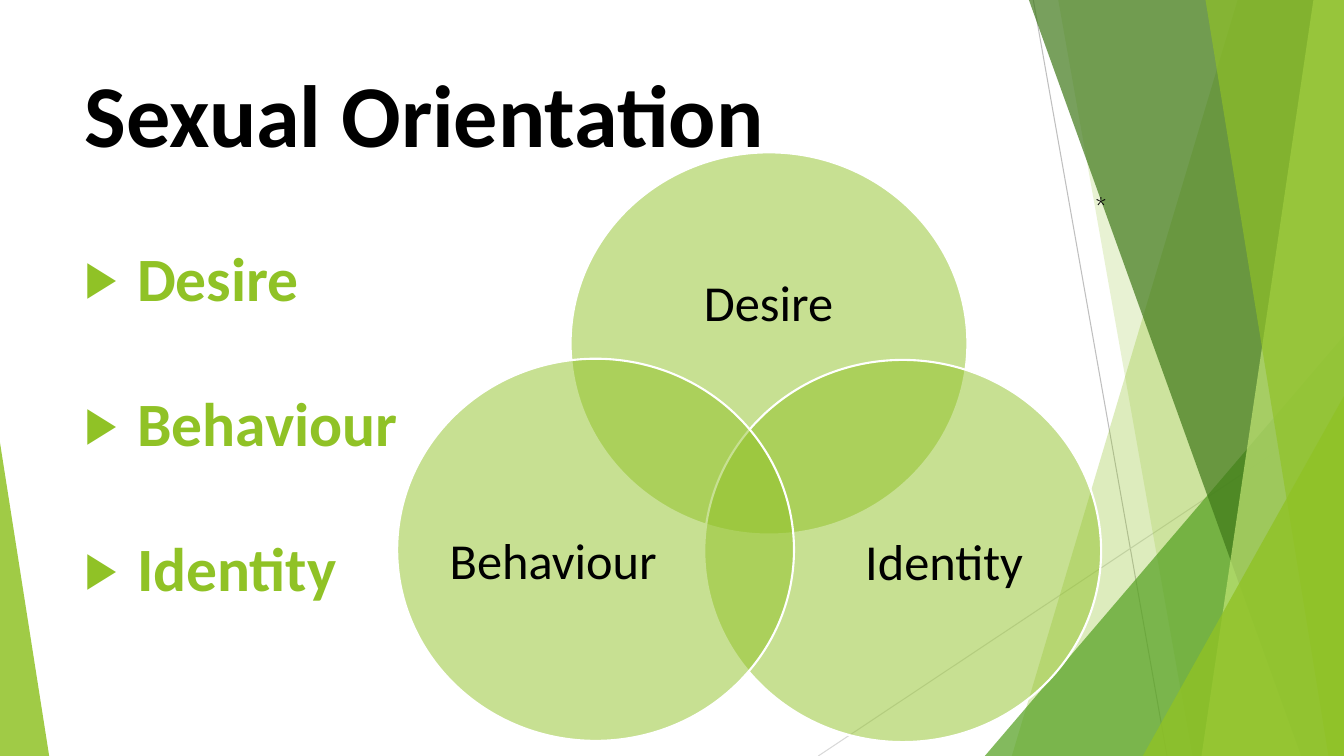
import pptx
import pptx.util
import pptx.dml.color
import pptx.enum.shapes
import pptx.enum.text
import pptx.oxml
import pptx.oxml.ns

Cm = pptx.util.Cm
Pt = pptx.util.Pt
KIND = pptx.enum.shapes.MSO_SHAPE
ANCHOR = pptx.enum.text.MSO_ANCHOR
ALIGN = pptx.enum.text.PP_ALIGN

WIDE, HIGH = 33.87, 19.05
HUES = {
    "lime": "90C226", "green": "54A021", "dark": "3F7819", "pale": "C0E474",
    "grey": "BFBFBF", "mist": "D9D9D9", "white": "FFFFFF", "black": "000000",
}
TITLE = "Sexual Orientation"
ITEMS = ["Desire", "Behaviour", "Identity"]
LINES = [
    ((26.04, 0), (29.41, HIGH), "grey"),
    ((WIDE, 10.24), (20.62, HIGH), "mist"),
]
DECOR = [
    ("band", (31.19, 25.5), "lime", 30),
    ("band", (26.67, 30.05), "lime", 20),
    ("wedge", (24.82, 8.46, 9.05, 10.59, 1), "green", 72),
    ("band", (25.93, 32.79), "dark", 70),
    ("band", (33.1, 30.28), "pale", 70),
    ("band", (30.38, 33.48), "lime", 65),
    ("wedge", (28.8, 9.98, 5.07, 9.07, 1), "lime", 80),
    ("wedge", (0, 11.15, 1.24, 7.9, 0), "lime", 85),
]
RING = (10, 9.63)
VENN = [
    ("Desire", (14.38, 3.84), (15.7, 5.51, 7.34, 4.34)),
    ("Identity", (17.75, 9.07), (20.8, 11.56, 5.99, 5.31)),
    ("Behaviour", (10.01, 9.04), (10.95, 11.53, 5.99, 5.31)),
]
STAR = ("*", (27.36, 4.7, 0.79, 1.02))
FONTS = {
    "title": {"name": "Calibri", "size": Pt(63), "bold": True},
    "item": {"name": "Calibri", "size": Pt(44), "bold": True},
    "label": {"name": "Calibri", "size": Pt(36)},
    "star": {"name": "Cabin", "size": Pt(18)},
}
FLAT = {"margin_left": 0, "margin_right": 0, "margin_top": 0, "margin_bottom": 0}


def tone(name):
    return pptx.dml.color.RGBColor.from_string(HUES[name])


def apply(part, form):
    for key, value in form.items():
        setattr(part, key, value)


def place(shape, box):
    apply(shape, dict(zip(("left", "top", "width", "height"), map(Cm, box))))


def node(home, tag, **data):
    child = pptx.oxml.ns.qn("a:" + tag)
    item = home.makeelement(child, data)
    home.append(item)
    return item


def paint(shape, hue, alpha):
    shape.shadow.inherit = False
    shape.fill.solid()
    shape.fill.fore_color.rgb = tone(hue)
    color = shape.fill._xPr.find(".//" + pptx.oxml.ns.qn("a:srgbClr"))
    node(color, "alpha", val=str(alpha * 1000))
    shape.line.fill.background()


def write(para, text, font, hue):
    run = para.add_run()
    run.text = text
    apply(run.font, FONTS[font])
    run.font.color.rgb = tone(hue)


def label(slide, text, box, font, frame, form):
    shape = slide.shapes.add_textbox(*map(Cm, box))
    apply(shape.text_frame, frame)
    para = shape.text_frame.paragraphs[0]
    apply(para, form)
    write(para, text, font, "black")


def rule(slide, start, end, hue):
    line = slide.shapes.add_connector(
        pptx.enum.shapes.MSO_CONNECTOR.STRAIGHT, *map(Cm, start + end))
    line.line.color.rgb = tone(hue)
    line.line.width = Pt(0.75)
    node(line._element.spPr, "effectLst")


def band(slide, top, base):
    dots = [(top, 0), (WIDE, 0), (WIDE, HIGH), (base, HIGH)]
    dots = [(Cm(x), Cm(y)) for x, y in dots]
    form = slide.shapes.build_freeform(*dots[0])
    form.add_line_segments(dots[1:], close=True)
    return form.convert_to_shape()


def wedge(slide, left, top, width, height, tip):
    shape = slide.shapes.add_shape(
        KIND.ISOSCELES_TRIANGLE, *map(Cm, (left, top, width, height)))
    shape.adjustments[0] = tip
    return shape


def bullet(para):
    props = para._p.get_or_add_pPr()
    apply(para, {"line_spacing": 0.99, "space_before": Pt(0), "space_after": Pt(51.5)})
    props.set("marL", str(Cm(1.32)))
    props.set("indent", str(-Cm(1.32)))
    node(node(props, "buClr"), "srgbClr", val=HUES["lime"])
    node(props, "buSzPct", val="80000")
    node(props, "buFont", typeface="Arial")
    node(props, "buChar", char="▶")


def main():
    deck = pptx.Presentation()
    apply(deck, {"slide_width": Cm(WIDE), "slide_height": Cm(HIGH)})
    slide = deck.slides.add_slide(deck.slide_layouts[1])
    head, body = slide.placeholders

    for start, end, hue in LINES:
        rule(slide, start, end, hue)
    draw = {"band": band, "wedge": wedge}
    for kind, data, hue, alpha in DECOR:
        paint(draw[kind](slide, *data), hue, alpha)

    frame = {"vertical_anchor": ANCHOR.TOP, "word_wrap": True,
             "auto_size": pptx.enum.text.MSO_AUTO_SIZE.NONE}
    place(head, (1.88, 1.24, 23.88, 3.66))
    apply(head.text_frame, {**frame, "margin_top": Cm(0.25)})
    para = head.text_frame.paragraphs[0]
    para.alignment = ALIGN.LEFT
    write(para, TITLE, "title", "black")

    place(body, (1.88, 5.99, 23.88, 10.77))
    apply(body.text_frame, frame)
    for rank, text in enumerate(ITEMS):
        para = body.text_frame.add_paragraph() if rank else body.text_frame.paragraphs[0]
        bullet(para)
        write(para, text, "item", "lime")

    middle = {**FLAT, "word_wrap": True, "vertical_anchor": ANCHOR.MIDDLE}
    for text, spot, box in VENN:
        ring = slide.shapes.add_shape(KIND.OVAL, *map(Cm, spot + RING))
        paint(ring, "lime", 50)
        ring.line.color.rgb = tone("white")
        ring.line.width = Pt(1.5)
        label(slide, text, box, "label", middle,
              {"alignment": ALIGN.CENTER, "line_spacing": 0.9})
    label(slide, *STAR, "star", {"word_wrap": False}, {"alignment": ALIGN.LEFT})
    deck.save("out.pptx")


if __name__ == "__main__":
    main()
